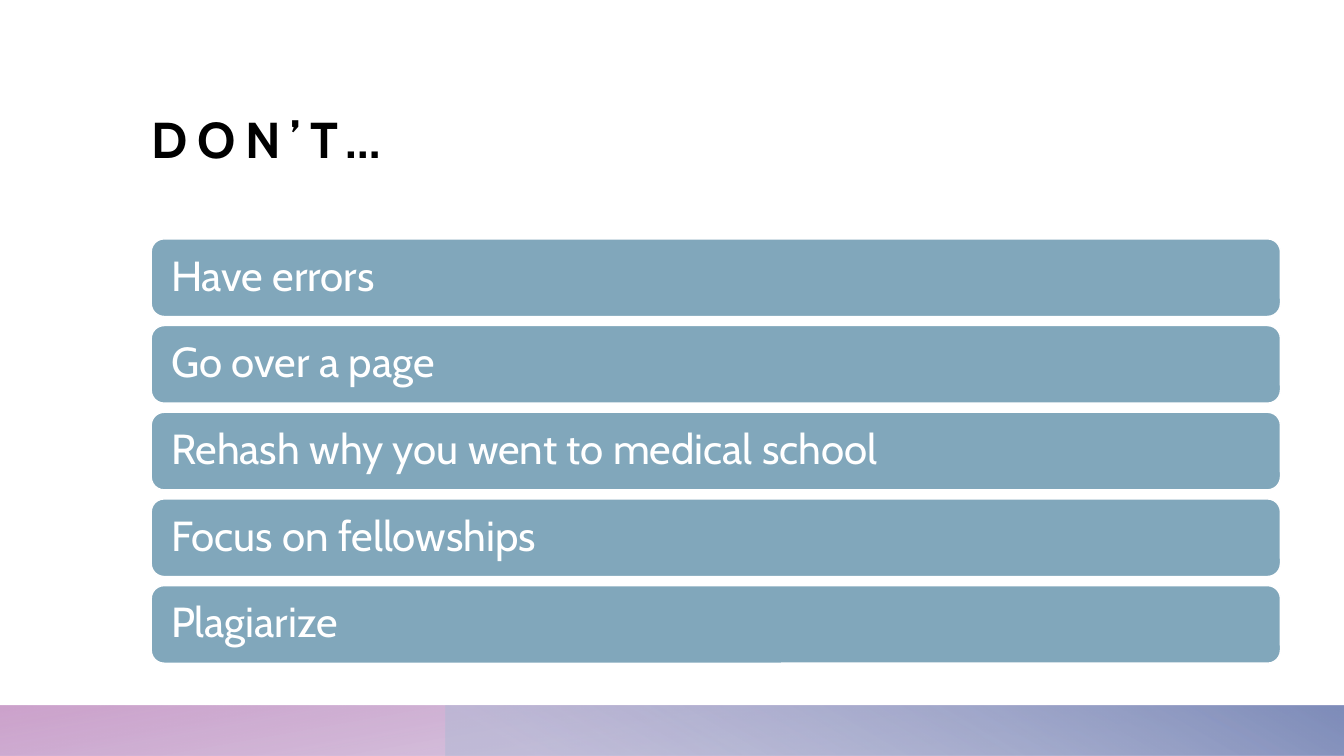
import dataclasses
import typing

import lxml.etree
import pptx
import pptx.dml.color
import pptx.enum.shapes
import pptx.enum.text
import pptx.oxml.ns
import pptx.util

Inches = pptx.util.Inches
Pt = pptx.util.Pt
SHAPE = pptx.enum.shapes.MSO_SHAPE
ANCHOR = pptx.enum.text.MSO_ANCHOR
FONT_NAME = "Cabin"
LEFT, WIDTH = 1.5, 11.2
BAR_TOP, BAR_HEIGHT, BAR_PITCH = 2.37, 0.77, 0.86


@dataclasses.dataclass
class Stop:
    position: float
    color: str
    opacity: int


@dataclasses.dataclass
class Band:
    left: float
    width: float
    rotation: int
    angle: int
    stops: tuple[Stop, Stop]


BANDS = (
    Band(0, 13.33, 180, 100, (Stop(0.14, "A27FBA", 28), Stop(1, "C492C3", 85))),
    Band(4.42, 8.92, 0, 240, (Stop(0.09, "B2BBD6", 55), Stop(0.99, "7F8DBA", 100))),
)
WARNINGS = (
    "Have errors",
    "Go over a page",
    "Rehash why you went to medical school",
    "Focus on fellowships",
    "Plagiarize",
)


def color(value: str) -> pptx.dml.color.RGBColor:
    return pptx.dml.color.RGBColor.from_string(value)


def set_attributes(target: typing.Any, values: dict[str, typing.Any]) -> None:
    for name, value in values.items():
        setattr(target, name, value)


def write_text(shape: typing.Any, text: str, anchor: typing.Any, inset: float,
               size: int, font_color: str, bold: bool) -> typing.Any:
    frame = shape.text_frame
    margin = Inches(inset)
    set_attributes(frame, {
        "word_wrap": True,
        "auto_size": pptx.enum.text.MSO_AUTO_SIZE.NONE,
        "vertical_anchor": anchor,
        "margin_left": margin,
        "margin_right": margin,
        "margin_top": margin,
        "margin_bottom": margin,
    })
    paragraph = frame.paragraphs[0]
    set_attributes(paragraph, {
        "alignment": pptx.enum.text.PP_ALIGN.LEFT,
        "line_spacing": 0.9,
    })
    run = paragraph.add_run()
    run.text = text
    set_attributes(run.font, {"name": FONT_NAME, "size": Pt(size), "bold": bold})
    run.font.color.rgb = color(font_color)
    return run


def draw_band(slide: typing.Any, band: Band) -> None:
    shape = slide.shapes.add_shape(
        SHAPE.RECTANGLE, Inches(band.left), Inches(7), Inches(band.width), Inches(0.5))
    shape.shadow.inherit = False
    shape.rotation = band.rotation
    shape._element.spPr.find(pptx.oxml.ns.qn("a:xfrm")).set("flipH", "1")
    shape.line.fill.background()
    shape.fill.gradient()
    shape.fill.gradient_angle = 360 - band.angle
    for gradient_stop, stop in zip(shape.fill.gradient_stops, band.stops):
        gradient_stop.position = stop.position
        gradient_stop.color.rgb = color(stop.color)
    color_elements = shape._element.spPr.iter(pptx.oxml.ns.qn("a:srgbClr"))
    for element, stop in zip(list(color_elements), band.stops):
        alpha = lxml.etree.SubElement(element, pptx.oxml.ns.qn("a:alpha"))
        alpha.set("val", str(stop.opacity * 1000))


def draw_title(slide: typing.Any) -> None:
    title = slide.shapes.title
    set_attributes(title, {
        "left": Inches(LEFT),
        "top": Inches(0.33),
        "width": Inches(WIDTH),
        "height": Inches(1.35),
    })
    run = write_text(title, "DON’T…", ANCHOR.BOTTOM, 0, 36, "000000", True)
    run.font._element.set("spc", "700")


def draw_bar(slide: typing.Any, index: int, warning: str) -> None:
    shape = slide.shapes.add_shape(
        SHAPE.ROUNDED_RECTANGLE, Inches(LEFT), Inches(BAR_TOP + index * BAR_PITCH),
        Inches(WIDTH), Inches(BAR_HEIGHT))
    shape.shadow.inherit = False
    shape.fill.solid()
    shape.fill.fore_color.rgb = color("81A7BB")
    shape.line.color.rgb = color("FFFFFF")
    shape.line.width = Pt(1)
    write_text(shape, warning, ANCHOR.MIDDLE, 0.16, 30, "FFFFFF", False)


def main() -> None:
    presentation = pptx.Presentation()
    set_attributes(presentation, {
        "slide_width": Inches(13.33),
        "slide_height": Inches(7.5),
    })
    slide = presentation.slides.add_slide(presentation.slide_layouts[5])
    for band in BANDS:
        draw_band(slide, band)
    draw_title(slide)
    for index, warning in enumerate(WARNINGS):
        draw_bar(slide, index, warning)
    presentation.save("out.pptx")


if __name__ == "__main__":
    main()
